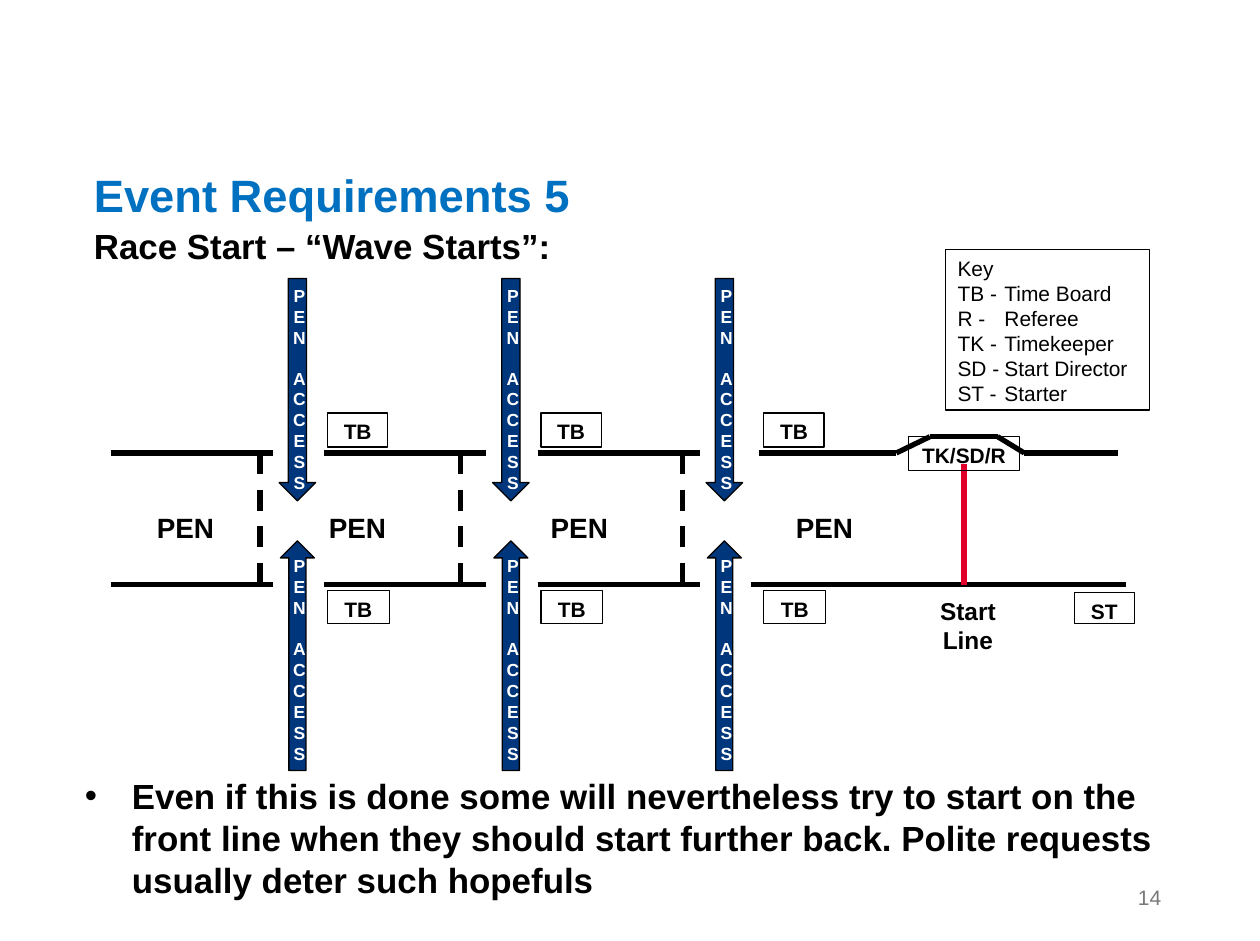
from itertools import pairwise

from lxml.etree import SubElement
from pptx import Presentation
from pptx.dml.color import RGBColor
from pptx.enum.dml import MSO_LINE
from pptx.enum.shapes import MSO_CONNECTOR, MSO_SHAPE
from pptx.enum.text import MSO_ANCHOR, PP_ALIGN
from pptx.oxml.ns import qn
from pptx.util import Cm, Pt

BLACK, WHITE, NAVY, RED = "000000", "FFFFFF", "00367C", "E1002C"
TITLE_BLUE, GREY = "0070C0", "797979"


def rgb(value):
    return RGBColor.from_string(value)


def write(tf, text, size=12, color=BLACK, bold=True, align=PP_ALIGN.CENTER,
          wrap=True, anchor=MSO_ANCHOR.TOP, gap=0, bullet=None, tab=None):
    tf.word_wrap = wrap
    tf.vertical_anchor = anchor
    for i, line in enumerate(text.split("\n")):
        p = tf.paragraphs[0] if i == 0 else tf.add_paragraph()
        p.alignment = align
        if i and gap:
            p.space_before = Pt(gap)
        pPr = p._p.get_or_add_pPr()
        if bullet:
            pPr.set("marL", str(Cm(bullet)))
            pPr.set("indent", str(-Cm(bullet)))
            SubElement(pPr, qn("a:buFont"), typeface="Arial")
            SubElement(pPr, qn("a:buChar"), char="•")
        if tab:
            tabs = SubElement(pPr, qn("a:tabLst"))
            SubElement(tabs, qn("a:tab"), pos=str(Cm(tab)), algn="l")
        r = p.add_run()
        r.text = line
        r.font.name = "Arial"
        r.font.size = Pt(size)
        r.font.bold = bold
        r.font.color.rgb = rgb(color)


class Diagram:
    """Draws the elements of the start area on one slide."""

    def __init__(self, slide):
        self.shapes = slide.shapes

    def text(self, x, y, w, h, text, **fmt):
        sp = self.shapes.add_textbox(Cm(x), Cm(y), Cm(w), Cm(h))
        write(sp.text_frame, text, **fmt)

    def shape(self, kind, x, y, w, h, fill=None):
        sp = self.shapes.add_shape(kind, Cm(x), Cm(y), Cm(w), Cm(h))
        sp.shadow.inherit = False
        if fill:
            sp.fill.solid()
            sp.fill.fore_color.rgb = rgb(fill)
        else:
            sp.fill.background()
        sp.line.color.rgb = rgb(BLACK)
        sp.line.width = Pt(0.75)
        return sp

    def box(self, x, y, w, h, text, **fmt):
        sp = self.shape(MSO_SHAPE.RECTANGLE, x, y, w, h)
        write(sp.text_frame, text, **{"wrap": False, **fmt})

    def line(self, x1, y1, x2, y2, color=BLACK, dash=None):
        c = self.shapes.add_connector(MSO_CONNECTOR.STRAIGHT, Cm(x1), Cm(y1), Cm(x2), Cm(y2))
        c.line.color.rgb = rgb(color)
        c.line.width = Pt(3)
        if dash:
            c.line.dash_style = dash
        SubElement(c._element.spPr, qn("a:effectLst"))

    def access(self, kind, center, y, w, h):
        sp = self.shape(kind, center - w / 2, y, w, h, NAVY)
        tf = sp.text_frame
        tf.margin_left, tf.margin_right, tf.margin_bottom = Cm(0.08), 0, 0
        write(tf, "PEN\nACCESS", size=10, color=WHITE, gap=11.5)


def main():
    prs = Presentation()
    prs.slide_width, prs.slide_height = Cm(25.5), Cm(19.05)
    s = Diagram(prs.slides.add_slide(prs.slide_layouts[6]))

    left = PP_ALIGN.LEFT
    s.text(1.65, 3.27, 10.26, 1.37, "Event Requirements 5",
           size=26, color=TITLE_BLUE, align=left, wrap=False)
    s.text(1.65, 4.42, 9.86, 1.12, "Race Start – “Wave Starts”:", size=20, align=left)
    s.text(18.01, 17.65, 5.74, 1.02, "14", color=GREY, bold=False,
           align=PP_ALIGN.RIGHT, anchor=MSO_ANCHOR.MIDDLE)
    s.text(1.47, 15.56, 22.28, 2.82,
           "Even if this is done some will nevertheless try to start on the front line "
           "when they should start further back. Polite requests usually deter such hopefuls",
           size=20, align=left, bullet=0.95)

    top, bottom, pitch = 9.17, 11.84, 4.32
    for i in range(3):
        x = 2.24 + i * pitch
        for y in (top, bottom):
            s.line(x, y, x + 3.28, y)
    s.line(15.19, bottom, 22.78, bottom)
    bay = [(15.37, top), (18.14, top), (18.82, 8.84), (20.19, 8.84), (20.73, top), (22.63, top)]
    for start, end in pairwise(bay):
        s.line(*start, *end)
    for x in (5.26, 9.32, 13.82):
        s.line(x, top, x, bottom, dash=MSO_LINE.DASH)
    s.line(19.51, 9.4, 19.51, bottom, color=RED)

    for x in (2.72, 6.2, 10.69, 15.65):
        s.text(x, 10.21, 2.07, 0.6, "PEN", size=16)
    s.text(18.47, 11.94, 2.24, 0.6, "Start Line", size=14)
    for x in (6.63, 10.95, 15.46):
        s.box(x, 8.36, 1.22, 0.69, "TB")
        s.box(x, 11.96, 1.25, 0.66, "TB")
    s.box(21.74, 11.99, 1.22, 0.64, "ST")
    s.box(18.39, 8.84, 2.24, 0.69, "TK/SD/R")
    s.box(19.13, 5.05, 4.14, 3.25,
          "Key\nTB -\tTime Board\nR -\tReferee\nTK -\tTimekeeper\nSD -\tStart Director\nST -\tStarter",
          bold=False, align=left, wrap=True, tab=0.95)

    for i in range(3):
        center = 6.02 + i * pitch
        s.access(MSO_SHAPE.DOWN_ARROW, center, 5.64, 0.74, 4.5)
        s.access(MSO_SHAPE.UP_ARROW, center, 10.95, 0.69, 4.65)

    prs.save("out.pptx")


if __name__ == "__main__":
    main()
